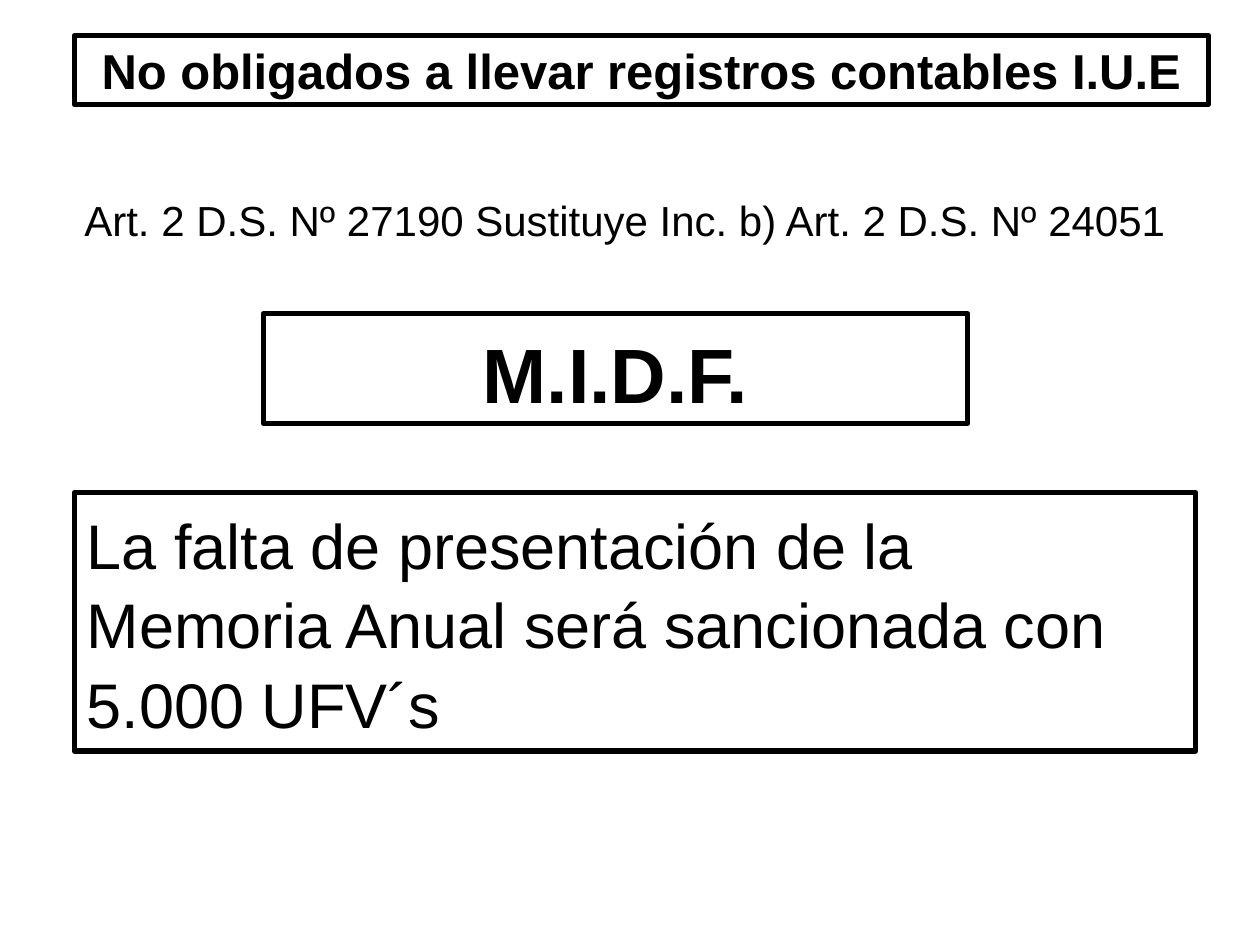
from lxml.etree import SubElement
from pptx import Presentation
from pptx.dml.color import RGBColor
from pptx.enum.shapes import MSO_SHAPE
from pptx.enum.text import MSO_ANCHOR, MSO_AUTO_SIZE, PP_ALIGN
from pptx.oxml.ns import qn
from pptx.util import Inches, Pt

BLACK = RGBColor(0, 0, 0)
WHITE = RGBColor(255, 255, 255)
FONT_NAME = "Arial"
GRID_STEP = 0.1


def grid(*steps):
    return [Inches(step * GRID_STEP) for step in steps]


def write_text(shape, lines, size, bold=False, align=PP_ALIGN.CENTER,
               wrap=True, spacing=1.0, margin_top=0.05):
    frame = shape.text_frame
    frame.text = "\n".join(lines)
    frame.auto_size = MSO_AUTO_SIZE.NONE
    frame.word_wrap = wrap
    frame.vertical_anchor = MSO_ANCHOR.MIDDLE
    frame.margin_left = frame.margin_right = Inches(0.1)
    frame.margin_top = Inches(margin_top)
    frame.margin_bottom = Inches(0.05)
    for paragraph in frame.paragraphs:
        paragraph.alignment = align
        paragraph.line_spacing = spacing
        paragraph.font.name = FONT_NAME
        paragraph.font.size = Pt(size)
        paragraph.font.bold = bold
        paragraph.font.color.rgb = BLACK


def outline(shape):
    shape.line.color.rgb = BLACK
    shape.line.width = Pt(3)


def format_title(slide, text, position):
    title = slide.shapes.title
    title.left, title.top, title.width, title.height = grid(*position)
    geometry = SubElement(title.element.spPr, qn("a:prstGeom"), prst="roundRect")
    adjustments = SubElement(geometry, qn("a:avLst"))
    SubElement(adjustments, qn("a:gd"), name="adj", fmla="val 167")
    outline(title)
    write_text(title, [text], size=28, bold=True)


def add_framed_text(slide, lines, position, **text_format):
    box = slide.shapes.add_shape(MSO_SHAPE.RECTANGLE, *grid(*position))
    box.shadow.inherit = False
    box.fill.background()
    outline(box)
    write_text(box, lines, **text_format)


def add_label(slide, text, position, **text_format):
    label = slide.shapes.add_textbox(*grid(*position))
    write_text(label, [text], **text_format)


def main():
    presentation = Presentation()
    presentation.slide_width = Inches(10)
    presentation.slide_height = Inches(7.5)
    slide = presentation.slides.add_slide(presentation.slide_layouts[5])
    slide.background.fill.solid()
    slide.background.fill.fore_color.rgb = WHITE

    format_title(slide, "No obligados a llevar registros contables I.U.E",
                 (5.9, 2.8, 90, 5.5))
    add_label(slide, "Art. 2 D.S. Nº 27190 Sustituye Inc. b) Art. 2 D.S. Nº 24051",
              (6.7, 15.5, 85.8, 3.9), size=24, wrap=False)
    add_framed_text(slide, ["M.I.D.F."], (20.9, 24.9, 55.9, 8.7),
                    size=44, bold=True, margin_top=0.12)
    add_framed_text(slide, ["La falta de presentación de la",
                            "Memoria Anual será sancionada con",
                            "5.000 UFV´s"],
                    (5.9, 39.1, 89, 20.5),
                    size=36, align=PP_ALIGN.LEFT, spacing=1.05)
    presentation.save("out.pptx")


if __name__ == "__main__":
    main()
